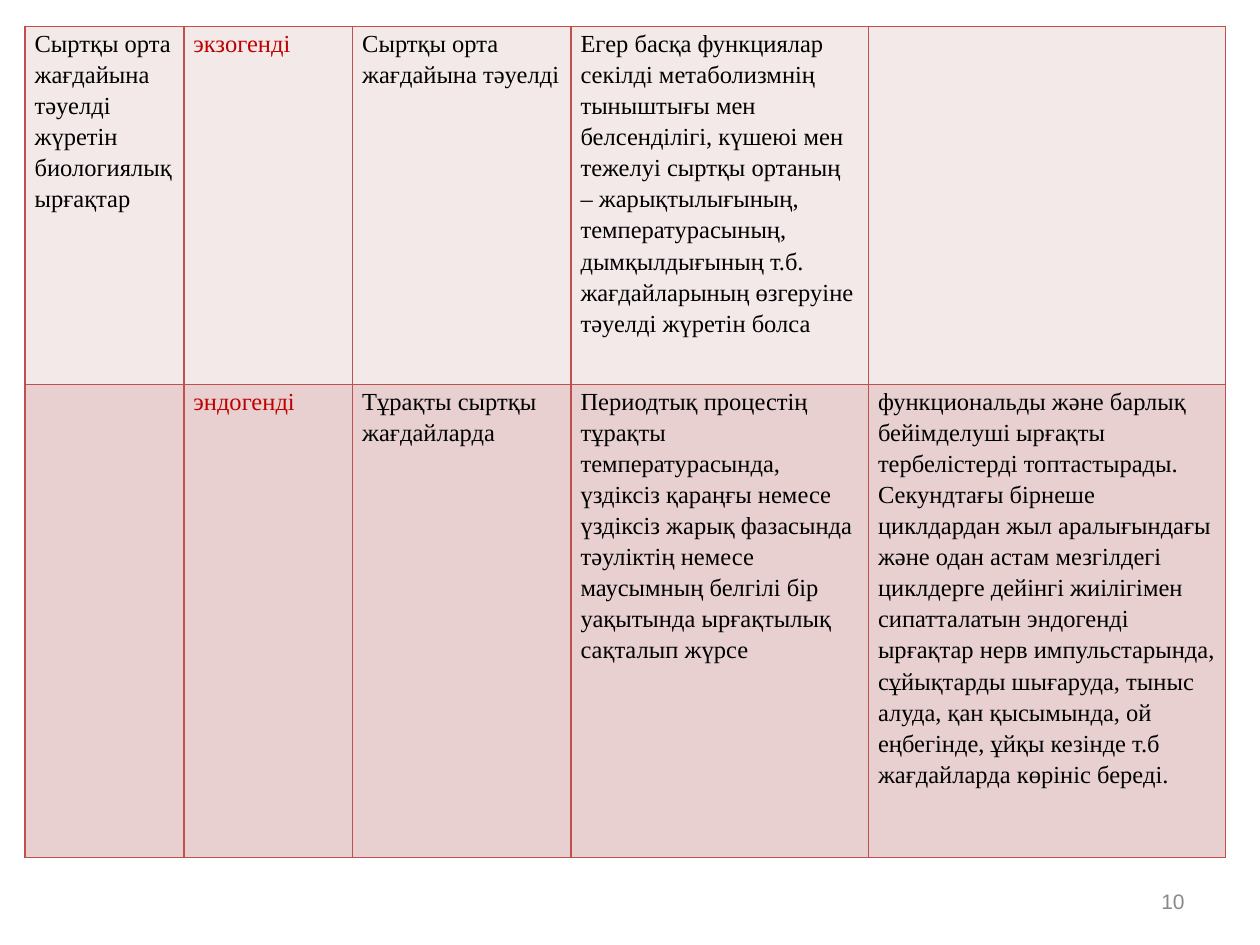
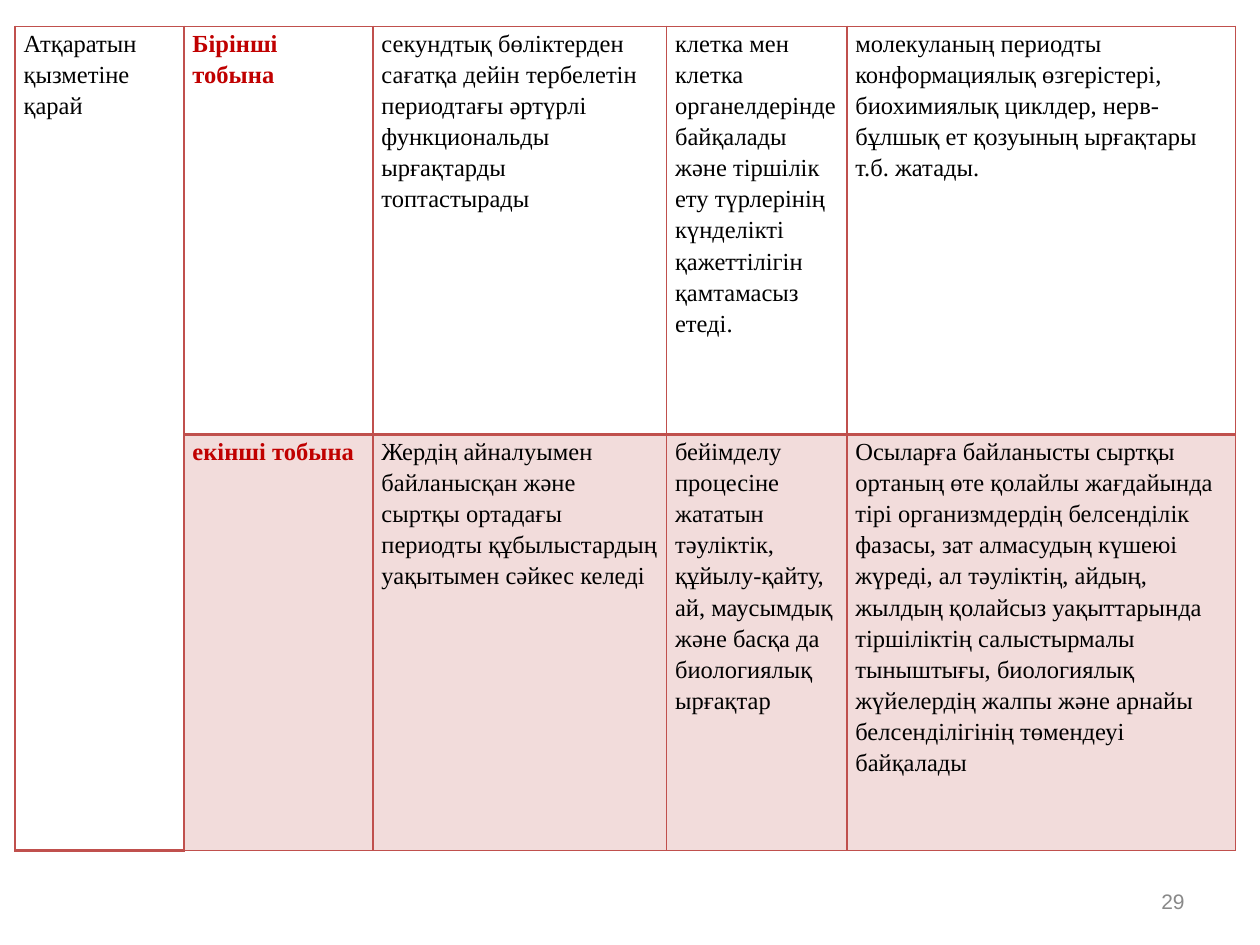
from lxml import etree
from pptx import Presentation
from pptx.dml.color import RGBColor
from pptx.enum.text import MSO_ANCHOR, PP_ALIGN
from pptx.oxml.ns import qn
from pptx.util import Pt

COLORS = {
    "text": "000000", "accent": "C00000", "border": "C0504D", "number": "898989",
    "light": "F4E9E9", "dark": "E8D0D0", "tint": "F2DCDB",
}
BODY = {"name": "Times New Roman", "size": Pt(14), "bold": False}
NUMBER = {"name": "Arial", "size": Pt(12)}
ACCENT_COLUMN = 1

SLIDES = [
    {
        "number": "10", "left": 14.4, "top": 15.12, "inset": 5.4,
        "columns": [90.72, 96.48, 124.8, 170, 204],
        "rows": [204.48, 270.5],
        "fills": ["light", "dark"],
        "accent_bold": False, "merge_first": False, "rule": 1,
        "cells": [
            ["Сыртқы орта жағдайына тәуелді жүретін биологиялық ырғақтар",
             "экзогенді",
             "Сыртқы орта жағдайына тәуелді",
             "Егер басқа функциялар секілді метаболизмнің тыныштығы мен белсенділігі, "
             "күшеюі мен тежелуі сыртқы ортаның – жарықтылығының, температурасының, "
             "дымқылдығының т.б. жағдайларының өзгеруіне тәуелді жүретін болса",
             ""],
            ["",
             "эндогенді",
             "Тұрақты сыртқы жағдайларда",
             "Периодтық процестің тұрақты температурасында, үздіксіз қараңғы немесе "
             "үздіксіз жарық фазасында тәуліктің немесе маусымның белгілі бір уақытында "
             "ырғақтылық сақталып жүрсе",
             "функциональды және барлық бейімделуші ырғақты тербелістерді топтастырады. "
             "Секундтағы бірнеше циклдардан жыл аралығындағы және одан астам мезгілдегі "
             "циклдерге дейінгі жиілігімен сипатталатын эндогенді ырғақтар нерв "
             "импульстарында, сұйықтарды шығаруда, тыныс алуда, қан қысымында, ой "
             "еңбегінде, ұйқы кезінде т.б жағдайларда көрініс береді."],
        ],
    },
    {
        "number": "29", "left": 8.64, "top": 15.12, "inset": 4.9,
        "columns": [96.48, 108, 167.8, 103, 222],
        "rows": [233.3, 237.6],
        "fills": [None, "tint"],
        "accent_bold": True, "merge_first": True, "rule": 2,
        "cells": [
            ["Атқаратын қызметіне қарай",
             "Бірінші тобына",
             "секундтық бөліктерден сағатқа дейін тербелетін периодтағы әртүрлі "
             "функциональды ырғақтарды топтастырады",
             "клетка мен клетка органелдерінде байқалады және тіршілік ету түрлерінің "
             "күнделікті қажеттілігін қамтамасыз етеді.",
             "молекуланың периодты конформациялық өзгерістері, биохимиялық циклдер, "
             "нерв-бұлшық ет қозуының ырғақтары т.б. жатады."],
            ["",
             "екінші тобына",
             "Жердің айналуымен байланысқан және сыртқы ортадағы периодты "
             "құбылыстардың уақытымен сәйкес келеді",
             "бейімделу процесіне жататын тәуліктік, құйылу-қайту, ай, маусымдық және "
             "басқа да биологиялық ырғақтар",
             "Осыларға байланысты сыртқы ортаның өте қолайлы жағдайында тірі "
             "организмдердің белсенділік фазасы, зат алмасудың күшеюі жүреді, ал "
             "тәуліктің, айдың, жылдың қолайсыз уақыттарында тіршіліктің салыстырмалы "
             "тыныштығы, биологиялық жүйелердің жалпы және арнайы белсенділігінің "
             "төмендеуі байқалады"],
        ],
    },
]


def rgb(name):
    return RGBColor.from_string(COLORS[name])


def set_font(font, color, **values):
    for key, value in values.items():
        setattr(font, key, value)
    font.color.rgb = rgb(color)


def set_borders(cell, **widths):
    """Draw the sides L, R, T and B; the lines must precede the fill in tcPr."""
    tcPr = cell._tc.get_or_add_tcPr()
    for i, side in enumerate("LRTB"):
        ln = etree.Element(qn(f"a:ln{side}"), w=str(Pt(widths.get(side, 1))))
        fill = etree.SubElement(ln, qn("a:solidFill"))
        etree.SubElement(fill, qn("a:srgbClr"), val=COLORS["border"])
        tcPr.insert(i, ln)


def format_cell(cell, text, fill, inset, color, bold):
    margins = {"margin_left": inset, "margin_right": inset, "margin_top": 0, "margin_bottom": 0}
    for key, value in margins.items():
        setattr(cell, key, Pt(value))
    if fill:
        cell.fill.solid()
        cell.fill.fore_color.rgb = rgb(fill)
    else:
        cell.fill.background()
    if text:
        p = cell.text_frame.paragraphs[0]
        p.line_spacing = 1.15
        r = p.add_run()
        r.text = text
        set_font(r.font, color, **{**BODY, "bold": bold})


def add_rhythm_table(s, data):
    columns, rows = data["columns"], data["rows"]
    frame = s.shapes.add_table(len(rows), len(columns), Pt(data["left"]), Pt(data["top"]),
                               Pt(sum(columns)), Pt(sum(rows)))
    table = frame.table
    table.first_row = table.horz_banding = False
    for column, width in zip(table.columns, columns):
        column.width = Pt(width)
    for row, height in zip(table.rows, rows):
        row.height = Pt(height)
    if data["merge_first"]:
        table.cell(0, 0).merge(table.cell(len(rows) - 1, 0))
    for i, texts in enumerate(data["cells"]):
        for j, text in enumerate(texts):
            cell = table.cell(i, j)
            merged = data["merge_first"] and j == 0
            accent = j == ACCENT_COLUMN
            format_cell(cell, text, None if merged else data["fills"][i], data["inset"],
                        "accent" if accent else "text", accent and data["accent_bold"])
            set_borders(cell, T=data["rule"] if i and not merged else 1,
                        B=data["rule"] if i == 0 or merged else 1)


def add_number(s, number):
    tf = s.shapes.add_textbox(Pt(516), Pt(500.5), Pt(168), Pt(28.75)).text_frame
    tf.word_wrap = True
    tf.vertical_anchor = MSO_ANCHOR.MIDDLE
    p = tf.paragraphs[0]
    p.alignment = PP_ALIGN.RIGHT
    r = p.add_run()
    r.text = number
    set_font(r.font, "number", **NUMBER)


def main():
    prs = Presentation()
    prs.slide_width, prs.slide_height = Pt(720), Pt(540)
    for data in SLIDES:
        s = prs.slides.add_slide(prs.slide_layouts[6])
        add_rhythm_table(s, data)
        add_number(s, data["number"])
    prs.save("out.pptx")


if __name__ == "__main__":
    main()
